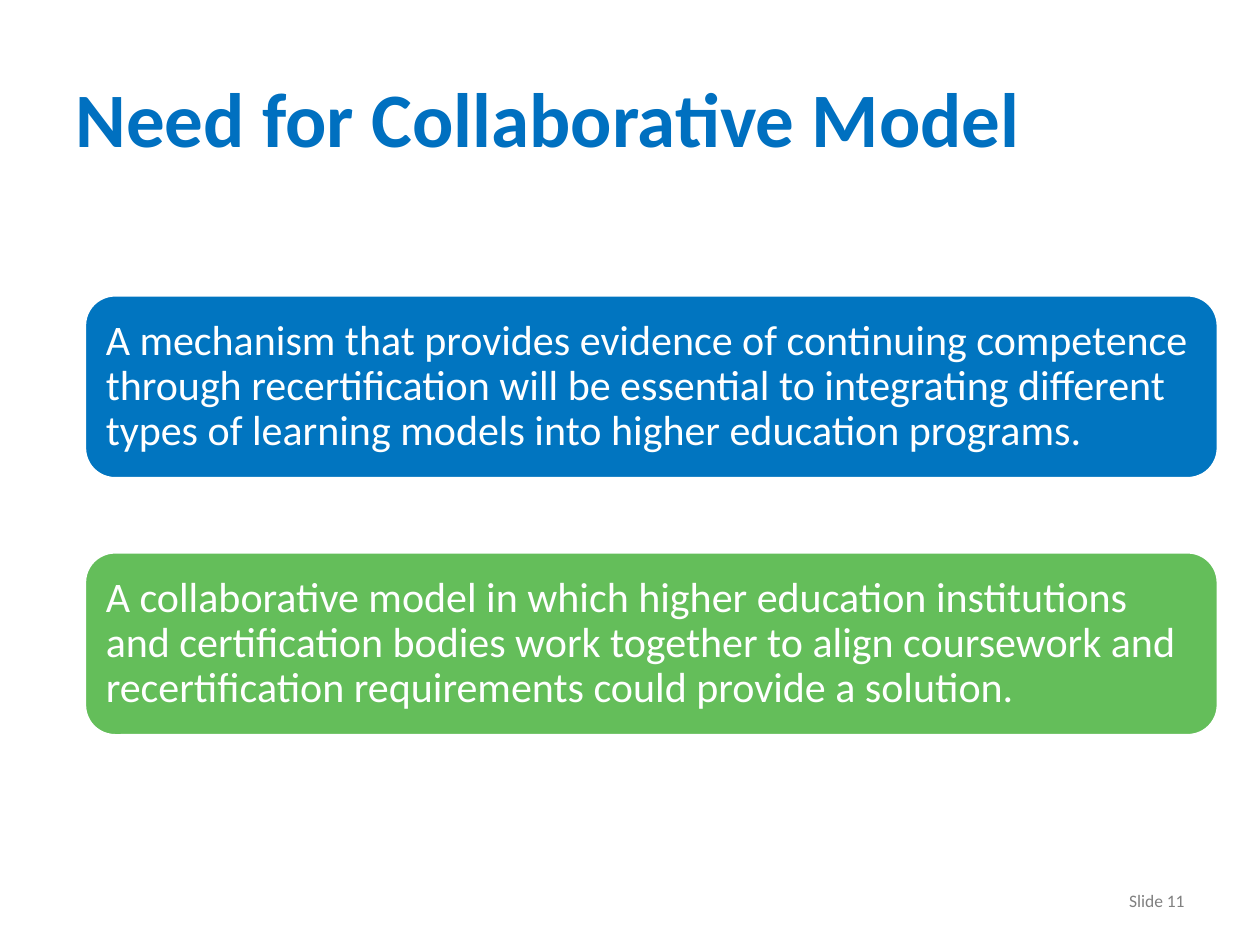
from pptx import Presentation
from pptx.dml.color import RGBColor
from pptx.enum.shapes import MSO_SHAPE as Shape
from pptx.enum.text import MSO_ANCHOR as Anchor, PP_ALIGN as Align
from pptx.util import Inches, Pt

COLORS = {
    "title": "0070C0",
    "blue": "0175C0",
    "green": "64BE5A",
    "white": "FFFFFF",
    "gray": "808080",
}
TITLE = "Need for Collaborative Model"
SLIDE_LABEL = "Slide 11"
STATEMENTS = [
    ("blue", "A mechanism that provides evidence of continuing competence through "
             "recertification will be essential to integrating different types of "
             "learning models into higher education programs."),
    ("green", "A collaborative model in which higher education institutions and "
              "certification bodies work together to align coursework and "
              "recertification requirements could provide a solution."),
]
CARD_LEFT, CARD_TOP, CARD_WIDTH, CARD_HEIGHT = 0.67, 2.34, 9, 1.46
CARD_PITCH = 2.04


def color(name):
    return RGBColor.from_string(COLORS[name])


def write(shape, text, size, font_color, bold=False, align=Align.LEFT,
          line_spacing=1.0, vertical_inset=0.05):
    frame = shape.text_frame
    frame.word_wrap = True
    frame.vertical_anchor = Anchor.MIDDLE
    frame.margin_left = frame.margin_right = Inches(0.1)
    frame.margin_top = frame.margin_bottom = Inches(vertical_inset)
    paragraph = frame.paragraphs[0]
    paragraph.text = text
    paragraph.alignment = align
    paragraph.line_spacing = line_spacing
    font = paragraph.font
    font.name, font.size, font.bold = "Calibri", Pt(size), bold
    font.color.rgb = color(font_color)


def add_card(slide, index, fill, text):
    card = slide.shapes.add_shape(
        Shape.ROUNDED_RECTANGLE, Inches(CARD_LEFT),
        Inches(CARD_TOP + index * CARD_PITCH),
        Inches(CARD_WIDTH), Inches(CARD_HEIGHT))
    card.shadow.inherit = False
    card.fill.solid()
    card.fill.fore_color.rgb = color(fill)
    card.line.color.rgb = color("white")
    card.line.width = Pt(2)
    write(card, text, 24, "white", line_spacing=0.9, vertical_inset=0.1)


def main():
    presentation = Presentation()
    presentation.slide_width, presentation.slide_height = Inches(10), Inches(7.5)
    slide = presentation.slides.add_slide(presentation.slide_layouts[5])

    title = slide.shapes.title
    title.left, title.top = Inches(0.5), Inches(0.3)
    title.width, title.height = Inches(9), Inches(1.25)
    write(title, TITLE, 44, "title", bold=True)

    label = slide.shapes.add_textbox(
        Inches(7.17), Inches(6.95), Inches(2.33), Inches(0.4))
    write(label, SLIDE_LABEL, 10, "gray", align=Align.RIGHT)

    for index, (fill, text) in enumerate(STATEMENTS):
        add_card(slide, index, fill, text)

    presentation.save("out.pptx")


if __name__ == "__main__":
    main()
